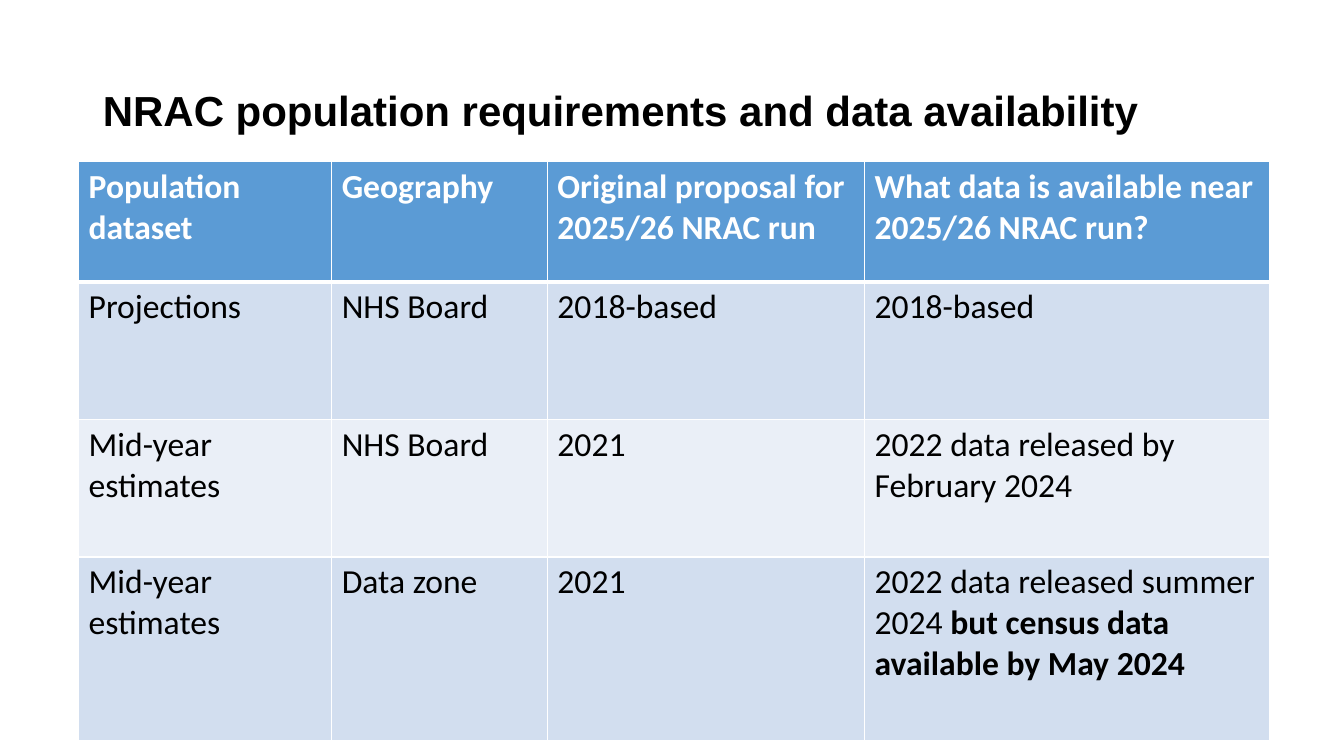
from lxml.etree import SubElement
from pptx import Presentation
from pptx.dml.color import RGBColor
from pptx.enum.text import MSO_ANCHOR as Anchor, MSO_AUTO_SIZE as AutoSize, PP_ALIGN as Align
from pptx.oxml.ns import qn
from pptx.util import Inches, Pt

WHITE, BLACK = "FFFFFF", "000000"
HEADER_BLUE = "5B9BD5"
BANDS = ("D2DEEF", "EAEFF7")


def colour(hex_string):
    return RGBColor.from_string(hex_string)


class SlideBuilder:
    heading_font, table_font = "Arial", "Calibri"
    heading_size, table_size = Pt(30), Pt(24)

    def __init__(self, deck):
        self.deck = deck
        self.slide = deck.slides.add_slide(deck.slide_layouts[5])

    def across(self, percent):
        return round(self.deck.slide_width * percent / 100)

    def down(self, percent):
        return round(self.deck.slide_height * percent / 100)

    def style(self, font, name, size, ink, bold):
        font.name, font.size, font.bold = name, size, bold
        font.color.rgb = colour(ink)

    def title(self, wording, left, top, width, height):
        heading = self.slide.shapes.title
        heading.left, heading.top = self.across(left), self.down(top)
        heading.width, heading.height = self.across(width), self.down(height)
        frame = heading.text_frame
        frame.text = wording
        frame.word_wrap = True
        frame.auto_size = AutoSize.NONE
        frame.vertical_anchor = Anchor.MIDDLE
        line = frame.paragraphs[0]
        line.alignment, line.line_spacing = Align.LEFT, 0.9
        self.style(line.font, self.heading_font, self.heading_size, BLACK, True)

    def borders(self, cell, bottom):
        properties = cell._tc.get_or_add_tcPr()
        for side, points in (("L", 1), ("R", 1), ("T", 1), ("B", bottom)):
            edge = SubElement(properties, qn(f"a:ln{side}"), w=str(Pt(points)))
            ink = SubElement(edge, qn("a:solidFill"))
            SubElement(ink, qn("a:srgbClr"), val=WHITE)

    def cell(self, cell, wording, fill, ink, bold, bottom):
        self.borders(cell, bottom)
        cell.fill.solid()
        cell.fill.fore_color.rgb = colour(fill)
        line = cell.text_frame.paragraphs[0]
        plain, _, emphasis = wording.partition("**")
        line.add_run().text = plain
        if emphasis:
            stressed = line.add_run()
            stressed.text = emphasis
            stressed.font.bold = True
        self.style(line.font, self.table_font, self.table_size, ink, bold)

    def table(self, records, left, top, widths, heights):
        grid = self.slide.shapes.add_table(
            len(records), len(widths), self.across(left), self.down(top),
            self.across(sum(widths)), self.down(sum(heights))).table
        for column, width in zip(grid.columns, widths):
            column.width = self.across(width)
        for row, height in zip(grid.rows, heights):
            row.height = self.down(height)
        for index, record in enumerate(records):
            header = index == 0
            fill = HEADER_BLUE if header else BANDS[(index - 1) % 2]
            ink = WHITE if header else BLACK
            bottom = 3 if header else 1
            for cell, wording in zip(grid.rows[index].cells, record):
                self.cell(cell, wording, fill, ink, header, bottom)


def main():
    deck = Presentation()
    deck.slide_width, deck.slide_height = Inches(13.33), Inches(7.5)
    builder = SlideBuilder(deck)
    builder.title("NRAC population requirements and data availability",
                  6.9, 5.33, 86.27, 19.33)
    datasets = [
        ("Population dataset", "Geography", "Original proposal for 2025/26 NRAC run",
         "What data is available near 2025/26 NRAC run?"),
        ("Projections", "NHS Board", "2018-based", "2018-based"),
        ("Mid-year estimates", "NHS Board", "2021", "2022 data released by February 2024"),
        ("Mid-year estimates", "Data zone", "2021",
         "2022 data released summer 2024 **but census data available by May 2024"),
    ]
    builder.table(datasets, 5.85, 21.4, (18.83, 16.05, 23.6, 30.12),
                  (15.87, 18.2, 18.2, 24.3))
    deck.save("out.pptx")


if __name__ == "__main__":
    main()
